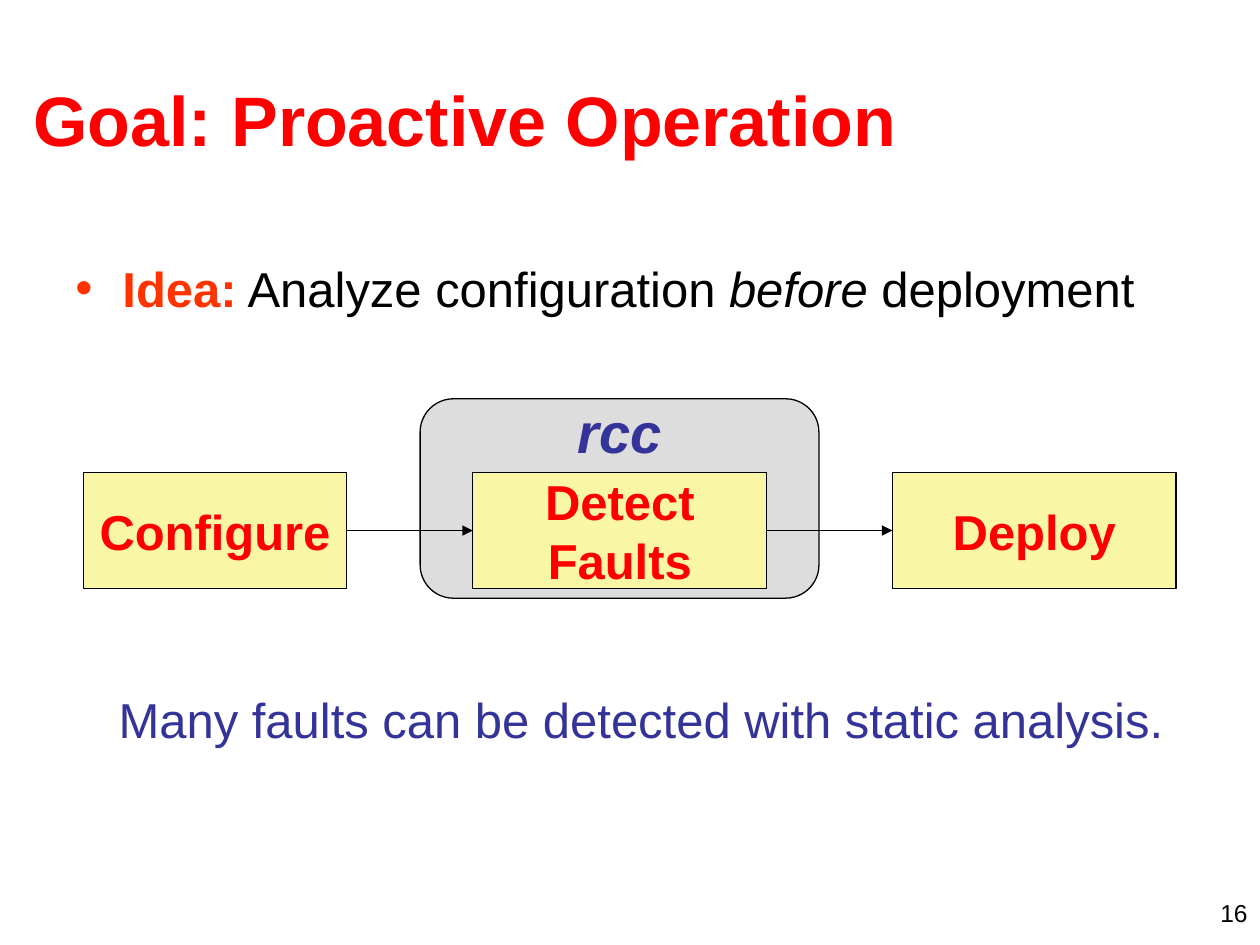
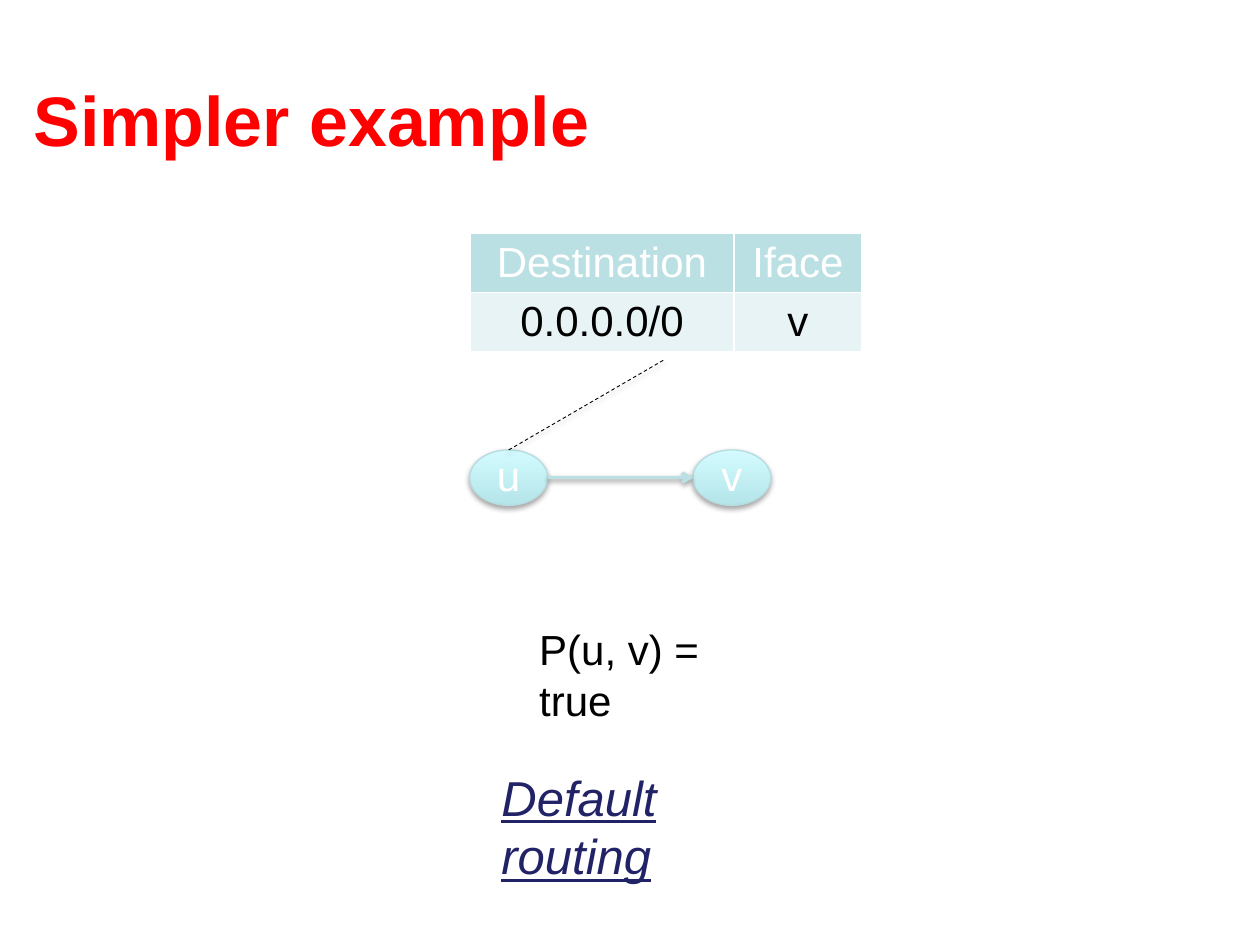
from lxml.etree import SubElement
from pptx import Presentation
from pptx.dml.color import RGBColor
from pptx.enum.dml import MSO_LINE_DASH_STYLE as Dash
from pptx.enum.shapes import MSO_CONNECTOR as Connector, MSO_SHAPE as Shape
from pptx.enum.text import MSO_ANCHOR as Anchor, PP_ALIGN as Align
from pptx.oxml.ns import qn
from pptx.util import Cm, Pt

FONT = "Arial"
RED, ORANGE, INDIGO, NAVY = "FF0000", "FF3300", "333399", "222267"
BLACK, WHITE, GREY, YELLOW = "000000", "FFFFFF", "DDDDDD", "F9F7A5"
TEAL, PALE_TEAL, NODE_EDGE = "BBE0E3", "E7F3F4", "B6DCDF"
NODE_BOTTOM, NODE_TOP = "B5E5E9", "D3FBFF"
TITLE_ONLY = 5


def rgb(value):
    """Turn a hex string into a colour."""
    return RGBColor.from_string(value)


def style(span, size, color, bold=False, italic=False, underline=False):
    """Format one run."""
    font = span.font
    font.name, font.size = FONT, Pt(size)
    font.bold, font.italic, font.underline = bold, italic, underline
    font.color.rgb = rgb(color)


def write(frame, text, size, color, align=Align.LEFT, **emphasis):
    """Fill a text frame and format all of its runs."""
    frame.text = text
    for para in frame.paragraphs:
        para.alignment = align
        for span in para.runs:
            style(span, size, color, **emphasis)


def add_page(deck, title):
    """Add a slide with the shared title style."""
    page = deck.slides.add_slide(deck.slide_layouts[TITLE_ONLY])
    box = page.shapes.title
    box.left, box.top, box.width, box.height = Cm(0.42), Cm(0.81), Cm(24.34), Cm(3.17)
    box.text_frame.vertical_anchor = Anchor.MIDDLE
    write(box.text_frame, title, 40, RED, bold=True)
    return page


def add_text(page, place, text, size, color, wrap=True, **look):
    """Add a text box in one style."""
    box = page.shapes.add_textbox(*map(Cm, place))
    box.text_frame.word_wrap = wrap
    write(box.text_frame, text, size, color, **look)


def add_bullet(page, place, parts):
    """Add a bulleted line made of differently styled parts."""
    box = page.shapes.add_textbox(*map(Cm, place))
    box.text_frame.word_wrap = True
    para = box.text_frame.paragraphs[0]
    for text, color, emphasis in parts:
        span = para.add_run()
        span.text = text
        style(span, 28, color, **emphasis)
    layout = para._p.get_or_add_pPr()
    layout.set("marL", str(Cm(0.95)))
    layout.set("indent", str(-Cm(0.95)))
    SubElement(layout, qn("a:buFont"), typeface=FONT)
    SubElement(layout, qn("a:buChar"), char="•")


def add_outlined(page, kind, place, line_color):
    """Add a preset shape with a thin outline and no shadow."""
    shape = page.shapes.add_shape(kind, *map(Cm, place))
    shape.shadow.inherit = False
    shape.line.color.rgb = rgb(line_color)
    shape.line.width = Pt(0.75)
    return shape


def add_panel(page, kind, place, fill):
    """Add a flat shape with a black outline."""
    panel = add_outlined(page, kind, place, BLACK)
    panel.fill.solid()
    panel.fill.fore_color.rgb = rgb(fill)
    return panel


def add_step(page, left, width, text):
    """Add one labelled step of the process."""
    step = add_panel(page, Shape.RECTANGLE, (left, 9.53, width, 2.33), YELLOW)
    step.text_frame.word_wrap = False
    step.text_frame.vertical_anchor = Anchor.MIDDLE
    write(step.text_frame, text, 28, RED, Align.CENTER, bold=True)
    return step


def add_shadow(effects, opacity, distance):
    """Put a soft downward shadow into an effect list."""
    shadow = SubElement(effects, qn("a:outerShdw"), blurRad=str(Pt(3.1)),
                        dist=str(Pt(distance)), dir="5400000", rotWithShape="0")
    tone = SubElement(shadow, qn("a:srgbClr"), val=BLACK)
    SubElement(tone, qn("a:alpha"), val=str(opacity * 1000))


def add_node(page, left, top, text):
    """Add a glossy network node."""
    node = add_outlined(page, Shape.OVAL, (left, top, 1.57, 1.12), NODE_EDGE)
    node.fill.gradient()
    node.fill.gradient_angle = 90
    for stop, position, color in zip(node.fill.gradient_stops, (0, 1), (NODE_BOTTOM, NODE_TOP)):
        stop.position = position
        stop.color.rgb = rgb(color)
    add_shadow(node.element.spPr.find(qn("a:effectLst")), 35, 1.8)
    frame = node.text_frame
    frame.margin_top, frame.margin_bottom = Cm(0), Cm(0.13)
    frame.vertical_anchor = Anchor.MIDDLE
    frame.word_wrap = False
    write(frame, text, 24, WHITE, Align.CENTER)
    return node


def add_line(page, ends, color, width, head=None, shadow=False):
    """Add a straight line, with an arrowhead or a shadow if wanted."""
    line = page.shapes.add_connector(Connector.STRAIGHT, *map(Cm, ends))
    line.line.color.rgb = rgb(color)
    line.line.width = Pt(width)
    properties = line.element.spPr
    if head:
        SubElement(properties.find(qn("a:ln")), qn("a:tailEnd"), type=head)
    effects = SubElement(properties, qn("a:effectLst"))
    if shadow:
        add_shadow(effects, 38, 1.6)
    return line


def add_routes(page, place, widths, rows):
    """Add the forwarding table with a coloured header."""
    table = page.shapes.add_table(len(rows), len(widths), *map(Cm, place)).table
    for column, width in zip(table.columns, widths):
        column.width = Cm(width)
    looks = [(TEAL, WHITE), (PALE_TEAL, BLACK)]
    for r, (texts, (fill, color)) in enumerate(zip(rows, looks)):
        for c, text in enumerate(texts):
            cell = table.cell(r, c)
            cell.fill.solid()
            cell.fill.fore_color.rgb = rgb(fill)
            write(cell.text_frame, text, 24, color, Align.CENTER)


def build_goal(deck):
    """Build the slide on proactive operation."""
    page = add_page(deck, "Goal: Proactive Operation")
    add_bullet(page, (1.27, 5.08, 22.86, 1.9), [
        ("Idea:", ORANGE, {"bold": True}),
        (" Analyze configuration ", BLACK, {}),
        ("before ", BLACK, {"italic": True}),
        ("deployment", BLACK, {}),
    ])
    add_text(page, (19.47, 17.98, 5.93, 0.64), "16", 14, BLACK, align=Align.RIGHT)
    add_panel(page, Shape.ROUNDED_RECTANGLE, (8.47, 8.04, 8.04, 4.02), GREY)
    steps = [add_step(page, left, width, text) for left, width, text in (
        (1.69, 5.29, "Configure"), (9.53, 5.93, "Detect\nFaults"), (17.99, 5.72, "Deploy"))]
    for start, end in zip(steps, steps[1:]):
        arrow = add_line(page, (0, 0, 0, 0), BLACK, 0.75, "triangle")
        arrow.begin_connect(start, 3)
        arrow.end_connect(end, 1)
    add_text(page, (10.37, 7.88, 4.23, 1.6), "rcc", 32, INDIGO,
             align=Align.CENTER, bold=True, italic=True)
    add_text(page, (1.07, 13.77, 23.7, 1.45),
             "Many faults can be detected with static analysis.", 28, INDIGO, align=Align.CENTER)


def build_example(deck):
    """Build the slide with the two-node example."""
    page = add_page(deck, "Simpler example")
    left, right, top = 9.47, 13.97, 9.07
    source = add_node(page, left, top, "u")
    add_node(page, right, top, "v")
    middle = top + 0.56
    add_line(page, (left + 1.57, middle, right, middle), TEAL, 2, "arrow", shadow=True)
    add_routes(page, (left, 4.7, 7.9, 2.38), (5.33, 2.57),
               [("Destination", "Iface"), ("0.0.0.0/0", "v")])
    add_text(page, (10.62, 12.45, 4.98, 1.27), "P(u, v) = true", 24, BLACK)
    callout = add_line(page, (10.26, top, 13.41, 7.24), BLACK, 0.5, shadow=True)
    callout.line.dash_style = Dash.DASH
    callout.begin_connect(source, 0)
    add_text(page, (9.86, 15.34, 6.91, 1.45), "Default routing", 28, NAVY,
             wrap=False, italic=True, underline=True)


def main():
    """Build and save the deck."""
    deck = Presentation()
    deck.slide_width, deck.slide_height = Cm(25.4), Cm(19.05)
    build_goal(deck)
    build_example(deck)
    deck.save("out.pptx")


if __name__ == "__main__":
    main()
